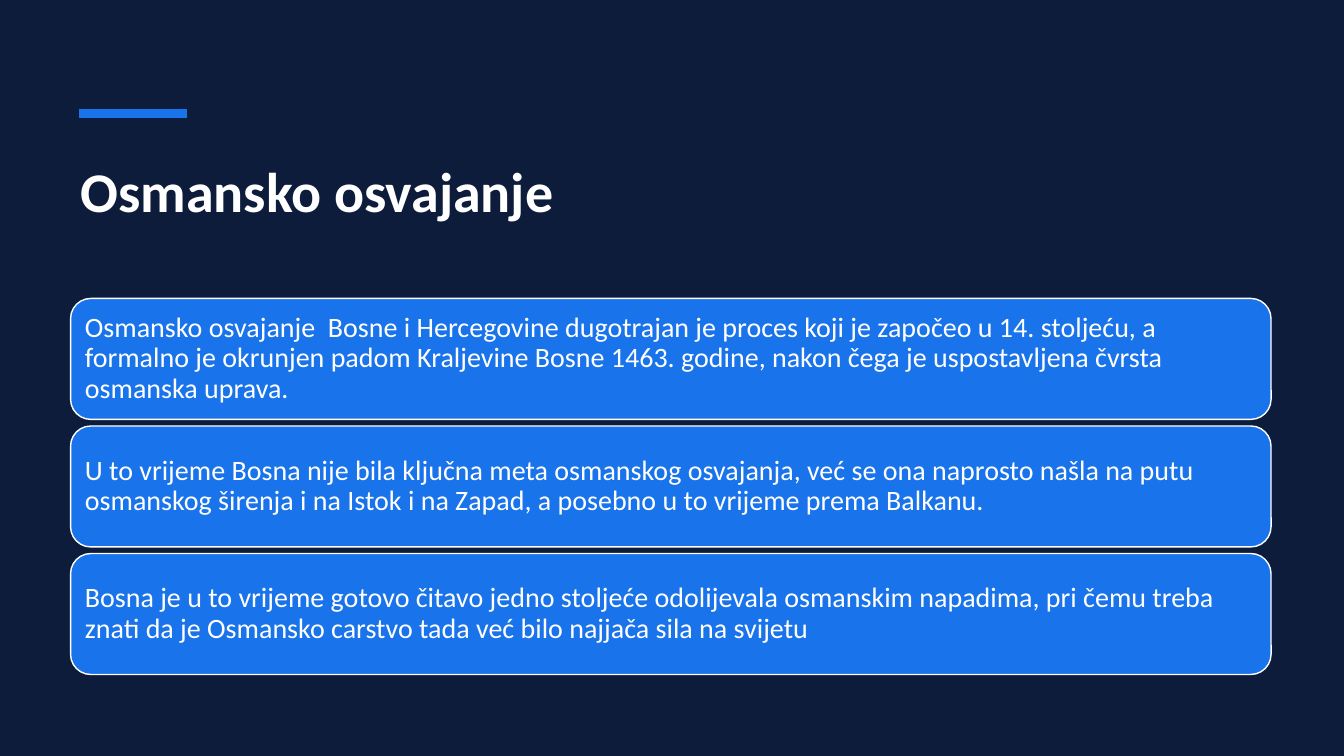
from pptx import Presentation
from pptx.dml.color import RGBColor
from pptx.enum import shapes, text
from pptx.oxml.ns import qn
from pptx.util import Pt
from lxml import etree

TITLE = "Osmansko osvajanje"
CARDS = [
    "Osmansko osvajanje  Bosne i Hercegovine dugotrajan je proces koji je započeo u 14. stoljeću, "
    "a formalno je okrunjen padom Kraljevine Bosne 1463. godine, nakon čega je uspostavljena "
    "čvrsta osmanska uprava.",
    "U to vrijeme Bosna nije bila ključna meta osmanskog osvajanja, već se ona naprosto našla na "
    "putu osmanskog širenja i na Istok i na Zapad, a posebno u to vrijeme prema Balkanu.",
    "Bosna je u to vrijeme gotovo čitavo jedno stoljeće odolijevala osmanskim napadima, pri čemu "
    "treba znati da je Osmansko carstvo tada već bilo najjača sila na svijetu",
]
NAVY, BLUE, WHITE = "0D1C3B", "1973EB", "FFFFFF"
LEFT, WIDTH = 50.4, 857.5
TITLE_TOP, CARD_TOP, CARD_HEIGHT, CARD_STEP = 108, 213.2, 86.4, 91.1
ACCENT_LEFT, ACCENT_RIGHT, ACCENT_Y = 56.4, 133.4, 81.2

TITLE_FRAME = {"word_wrap": True, "vertical_anchor": text.MSO_ANCHOR.TOP,
               "auto_size": text.MSO_AUTO_SIZE.NONE}
CARD_FRAME = {"word_wrap": True, "vertical_anchor": text.MSO_ANCHOR.MIDDLE,
              "margin_left": Pt(6), "margin_right": Pt(6),
              "margin_top": Pt(6), "margin_bottom": Pt(6)}
TITLE_FONT = {"name": "Calibri", "size": Pt(40), "bold": True}
CARD_FONT = {"name": "Calibri", "size": Pt(20), "bold": False}


def color(value):
    return RGBColor.from_string(value)


def apply(target, values):
    for name, value in values.items():
        setattr(target, name, value)


def write(shape, content, frame_format, font_format, line_spacing):
    frame = shape.text_frame
    frame.text = content
    apply(frame, frame_format)
    paragraph = frame.paragraphs[0]
    apply(paragraph, {"alignment": text.PP_ALIGN.LEFT, "line_spacing": line_spacing})
    apply(paragraph.font, font_format)
    paragraph.font.color.rgb = color(WHITE)


def add_accent(slide):
    accent = slide.shapes.add_connector(
        shapes.MSO_CONNECTOR.STRAIGHT,
        Pt(ACCENT_LEFT), Pt(ACCENT_Y), Pt(ACCENT_RIGHT), Pt(ACCENT_Y))
    accent.line.color.rgb = color(BLUE)
    accent.line.width = Pt(6)
    properties = accent.element.find(qn("p:spPr"))
    etree.SubElement(properties, qn("a:effectLst"))


def add_title(slide):
    title = slide.shapes.title
    apply(title, {"left": Pt(LEFT), "top": Pt(TITLE_TOP),
                  "width": Pt(WIDTH), "height": Pt(CARD_HEIGHT)})
    write(title, TITLE, TITLE_FRAME, TITLE_FONT, 1.0)


def add_card(slide, index, content):
    card = slide.shapes.add_shape(
        shapes.MSO_SHAPE.ROUNDED_RECTANGLE,
        Pt(LEFT), Pt(CARD_TOP + index * CARD_STEP), Pt(WIDTH), Pt(CARD_HEIGHT))
    card.shadow.inherit = False
    card.fill.solid()
    card.fill.fore_color.rgb = color(BLUE)
    card.line.color.rgb = color(WHITE)
    card.line.width = Pt(1)
    write(card, content, CARD_FRAME, CARD_FONT, 0.9)


def main():
    presentation = Presentation()
    presentation.slide_width, presentation.slide_height = Pt(960), Pt(540)
    slide = presentation.slides.add_slide(presentation.slide_layouts[5])
    slide.background.fill.solid()
    slide.background.fill.fore_color.rgb = color(NAVY)
    add_accent(slide)
    add_title(slide)
    for index, content in enumerate(CARDS):
        add_card(slide, index, content)
    presentation.save("out.pptx")


if __name__ == "__main__":
    main()
